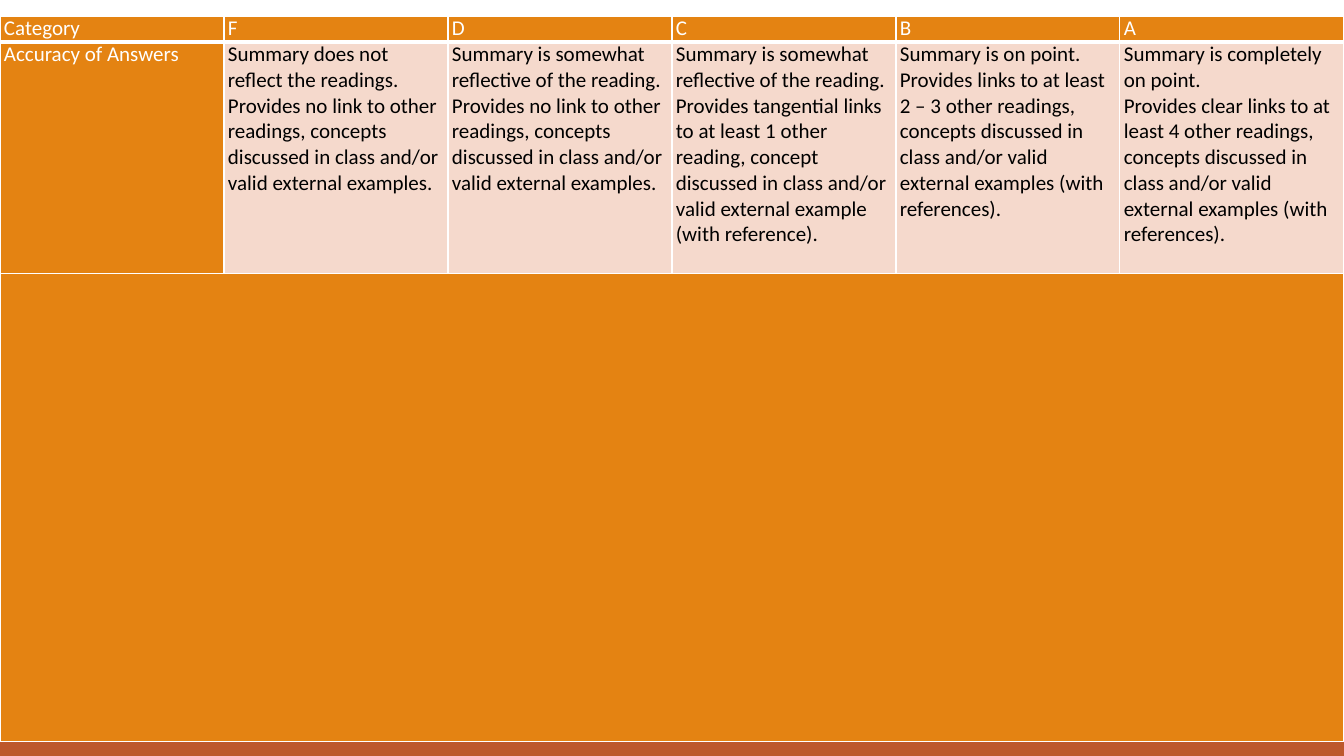
import pptx
import pptx.util
import pptx.dml.color
import pptx.enum.shapes
import pptx.oxml
import pptx.oxml.ns

COLOURS = {
    "orange": "E48312",
    "rust": "BD582C",
    "blush": "F5D9CC",
    "white": "FFFFFF",
    "black": "000000",
}
NO_LINK = ("Provides no link to other readings, concepts discussed in class "
           "and/or valid external examples.")
SOMEWHAT = "Summary is somewhat reflective of the reading."
GRADES = {
    "F": ["Summary does not reflect the readings.", NO_LINK],
    "D": [SOMEWHAT, NO_LINK],
    "C": [SOMEWHAT,
          "Provides tangential links to at least 1 other reading, concept discussed "
          "in class and/or valid external example (with reference)."],
    "B": ["Summary is on point.",
          "Provides links to at least 2 – 3 other readings, concepts discussed in "
          "class and/or valid external examples (with references)."],
    "A": ["Summary is completely on point.",
          "Provides clear links to at least 4 other readings, concepts discussed in "
          "class and/or valid external examples (with references)."],
}


def px(length):
    return pptx.util.Emu(round(length * 914400 / 100.8))


def rgb(name):
    return pptx.dml.color.RGBColor.from_string(COLOURS[name])


def write(frame, text, colour="black", size=15, font="Calibri"):
    frame.text = text
    for paragraph in frame.paragraphs:
        for run in paragraph.runs:
            run.font.name = font
            run.font.size = pptx.util.Pt(size)
            run.font.bold = False
            run.font.color.rgb = rgb(colour)


class RubricSlide:
    """Draws the grading rubric on one slide in a shared style."""

    def __init__(self, deck):
        self.slide = deck.slides.add_slide(deck.slide_layouts[6])
        self.border_colour = "white"

    def band(self, top, height, colour):
        band = self.slide.shapes.add_shape(
            pptx.enum.shapes.MSO_SHAPE.RECTANGLE, 0, px(top), px(1344), px(height))
        band.shadow.inherit = False
        band.fill.solid()
        band.fill.fore_color.rgb = rgb(colour)
        band.line.fill.background()

    def borders(self, cell, bottom):
        properties = cell._tc.get_or_add_tcPr()
        for side, points in (("L", 1), ("R", 1), ("T", 1), ("B", bottom)):
            properties.append(pptx.oxml.parse_xml(
                f'<a:ln{side} {pptx.oxml.ns.nsdecls("a")} w="{points * 12700}">'
                f'<a:solidFill><a:srgbClr val="{COLOURS[self.border_colour]}"/>'
                f'</a:solidFill></a:ln{side}>'))

    def cell(self, cell, text, fill, colour, bottom=1):
        self.borders(cell, bottom)
        cell.fill.solid()
        cell.fill.fore_color.rgb = rgb(fill)
        cell.margin_left = cell.margin_right = px(4)
        cell.margin_top = cell.margin_bottom = 0
        write(cell.text_frame, text, colour=colour)

    def rubric(self, top, column_width, row_heights):
        headings = ["Category", *GRADES]
        descriptions = ["Accuracy of Answers", *map("\n".join, GRADES.values())]
        rubric = self.slide.shapes.add_table(
            len(row_heights), len(headings), 0, px(top),
            px(column_width * len(headings)), px(sum(row_heights))).table
        rubric.horz_banding = False
        for row, height in zip(rubric.rows, row_heights):
            row.height = px(height)
        for index, (heading, description) in enumerate(zip(headings, descriptions)):
            rubric.columns[index].width = px(column_width)
            self.cell(rubric.cell(0, index), heading, "orange", "white", bottom=3)
            fill, colour = ("blush", "black") if index else ("orange", "white")
            self.cell(rubric.cell(1, index), description, fill, colour)
            self.cell(rubric.cell(2, index), "", "orange", "white")
        rubric.cell(2, 0).merge(rubric.cell(2, len(headings) - 1))


def main():
    deck = pptx.Presentation()
    deck.slide_width, deck.slide_height = px(1344), px(756)
    page = RubricSlide(deck)
    page.band(706, 50, "rust")
    page.band(699, 7, "orange")
    page.rubric(top=16, column_width=224, row_heights=[25, 232, 468])
    deck.save("out.pptx")


if __name__ == "__main__":
    main()
